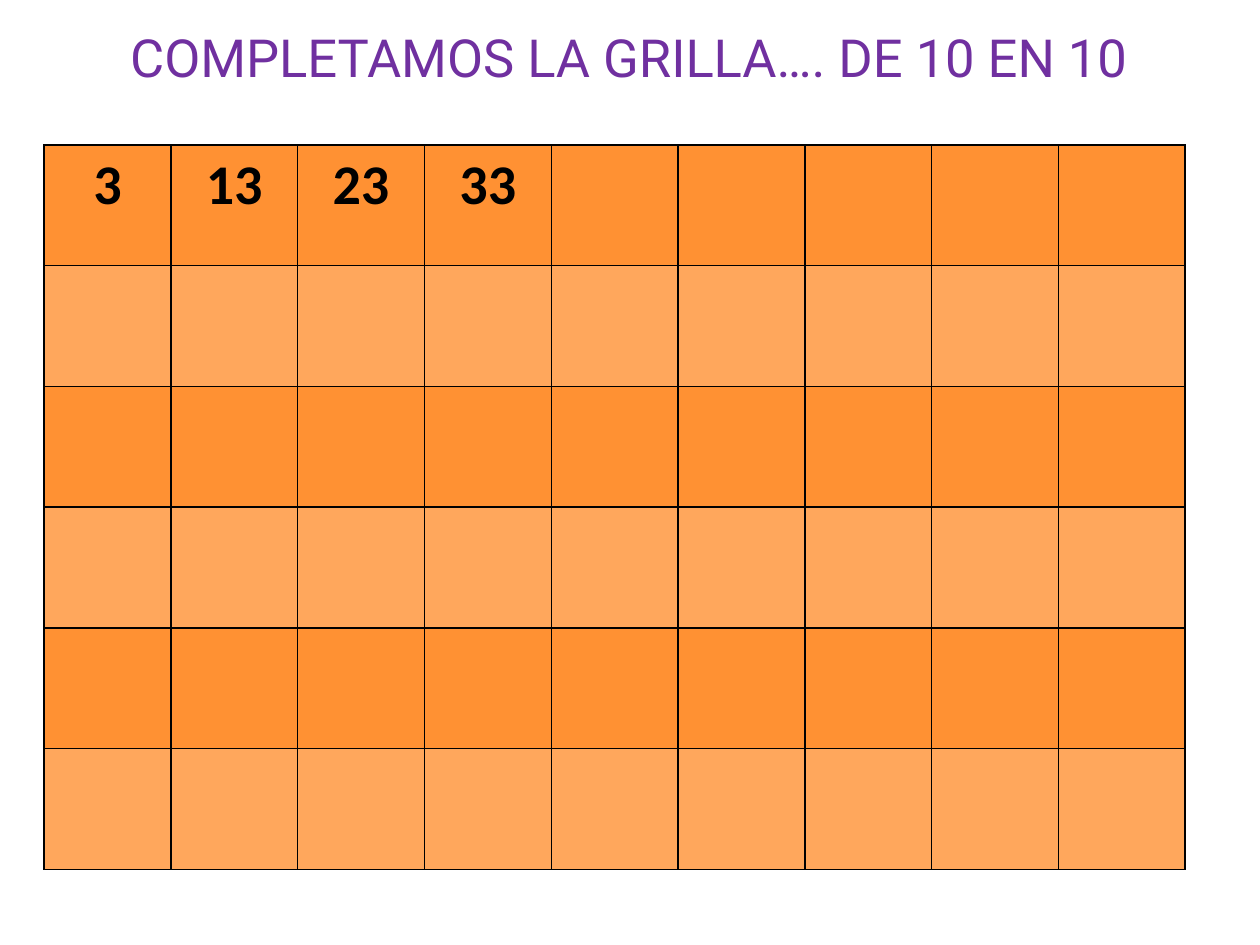
from lxml.etree import SubElement
from pptx import Presentation
from pptx.dml.color import RGBColor
from pptx.enum.text import MSO_ANCHOR, PP_ALIGN
from pptx.oxml.ns import qn
from pptx.util import Inches, Pt

PURPLE = RGBColor(0x70, 0x30, 0xA0)
BLACK = RGBColor(0x00, 0x00, 0x00)
ORANGE = RGBColor(0xFF, 0x91, 0x33)
LIGHT_ORANGE = RGBColor(0xFF, 0xA7, 0x5C)
ROWS, COLS = 6, 9
NUMBERS = range(3, 34, 10)


def add_run(p, text, font, size, color, bold=False):
    """Add a centred run with its font settings."""
    p.alignment = PP_ALIGN.CENTER
    r = p.add_run()
    r.text = text
    r.font.name = font
    r.font.size = Pt(size)
    r.font.bold = bold
    r.font.color.rgb = color


def set_title(s, text):
    """Place and fill the title placeholder."""
    sp = s.shapes.title
    sp.left, sp.top = Inches(0.2), Inches(-0.18)
    sp.width, sp.height = Inches(9.69), Inches(1.25)
    tf = sp.text_frame
    tf.word_wrap = True
    tf.vertical_anchor = MSO_ANCHOR.MIDDLE
    add_run(tf.paragraphs[0], text, "Roboto", 30, PURPLE)


def set_borders(cell):
    """Draw a thin black line on all four sides of a cell."""
    tc_pr = cell._tc.get_or_add_tcPr()
    for side in ("lnL", "lnR", "lnT", "lnB"):
        ln = SubElement(tc_pr, qn(f"a:{side}"), w=str(Pt(1)))
        fill = SubElement(ln, qn("a:solidFill"))
        SubElement(fill, qn("a:srgbClr"), val=str(BLACK))


def add_grid(s):
    """Add the banded number grid with its first numbers."""
    table = s.shapes.add_table(
        ROWS, COLS, Inches(0.35), Inches(1.15), Inches(9.06), Inches(5.75)
    ).table
    for row in range(ROWS):
        for col in range(COLS):
            cell = table.cell(row, col)
            set_borders(cell)
            cell.fill.solid()
            cell.fill.fore_color.rgb = LIGHT_ORANGE if row % 2 else ORANGE
    for col, number in enumerate(NUMBERS):
        p = table.cell(0, col).text_frame.paragraphs[0]
        add_run(p, str(number), "Calibri", 32, BLACK, bold=True)


def main():
    """Build and save the slide."""
    prs = Presentation()
    prs.slide_width, prs.slide_height = Inches(10), Inches(7.5)
    s = prs.slides.add_slide(prs.slide_layouts[5])
    set_title(s, "COMPLETAMOS LA GRILLA…. DE 10 EN 10 ")
    add_grid(s)
    prs.save("out.pptx")


if __name__ == "__main__":
    main()
